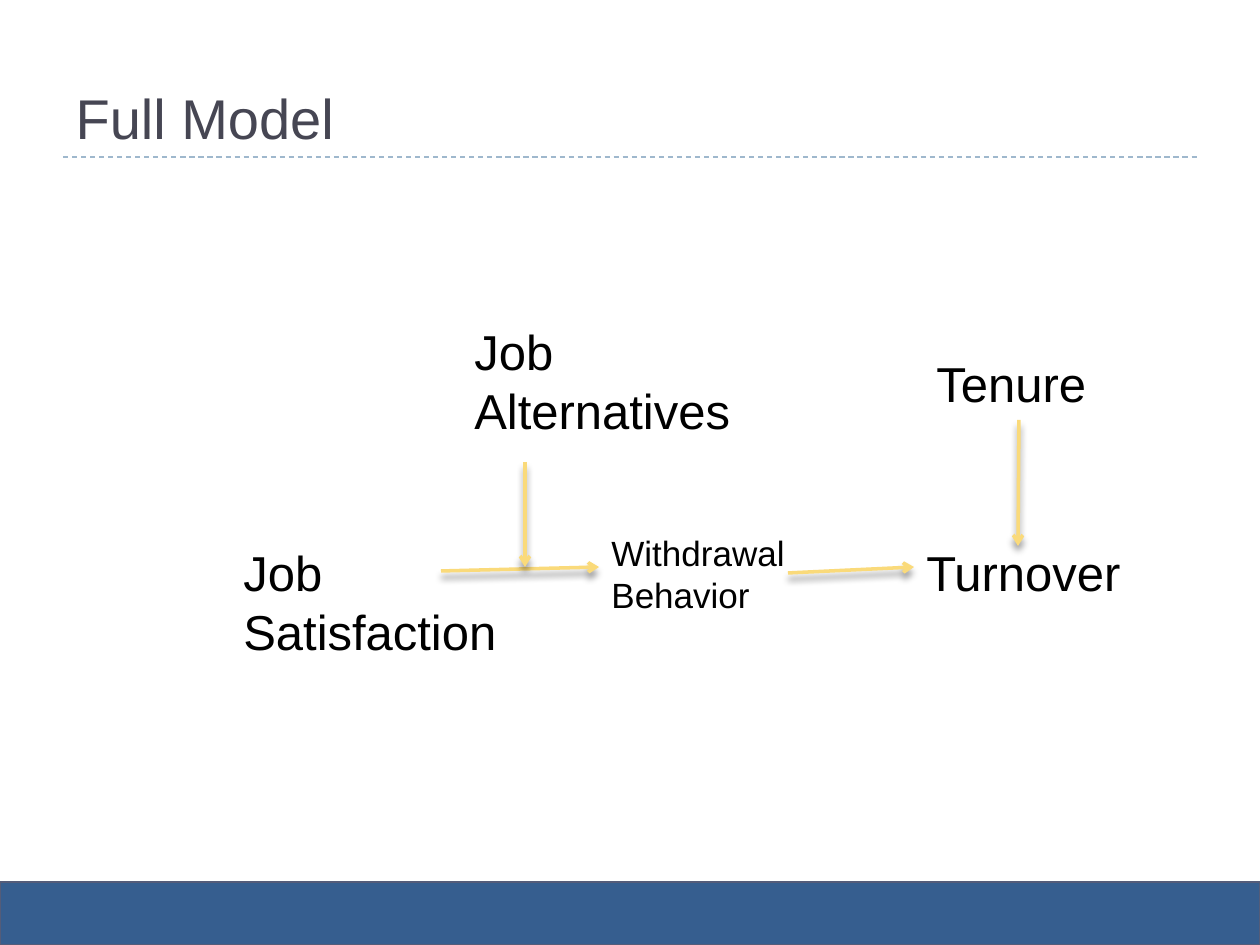
from lxml.etree import SubElement
from pptx import Presentation
from pptx.dml.color import RGBColor
from pptx.enum.dml import MSO_LINE
from pptx.enum.shapes import MSO_CONNECTOR, MSO_SHAPE
from pptx.enum.text import MSO_ANCHOR as ANCHOR, MSO_AUTO_SIZE as AUTO_SIZE, PP_ALIGN
from pptx.oxml.ns import qn
from pptx.util import Pt

PX = 914400 / 126
SLIDE_WIDTH, SLIDE_HEIGHT = 1260, 945
FONT = "Arial"
BLACK = RGBColor(0x00, 0x00, 0x00)
TITLE_GRAY = RGBColor(0x46, 0x46, 0x53)
RULE_BLUE = RGBColor(0x9F, 0xB8, 0xCD)
BAND_BLUE = RGBColor(0x36, 0x5E, 0x8F)
BAND_EDGE = RGBColor(0x54, 0x5C, 0x79)
ARROW_YELLOW = RGBColor(0xFA, 0xDA, 0x7A)

# Variables of the model: text, offset and size within the diagram, text size
VARIABLES = [
    ("Turnover", (683, 221, 262, 72), 28),
    ("Job Satisfaction", (0, 221, 325, 131), 28),
    ("Withdrawal\nBehavior", (368, 210, 221, 97), 20),
    ("Job Alternatives", (231, 0, 357, 131), 28),
    ("Tenure", (693, 32, 210, 72), 28),
]
# Effects between them: start and end within the diagram
EFFECTS = [
    ((210, 256), (368, 252)),
    ((557, 258), (683, 252)),
    ((788, 105), (787, 231)),
    ((294, 147), (294, 252)),
]


def emu(*lengths):
    return [round(length * PX) for length in lengths]


def write_text(shape, text, size=28, color=BLACK, anchor=ANCHOR.TOP, auto_size=AUTO_SIZE.NONE):
    frame = shape.text_frame
    frame.text = text
    frame.word_wrap = True
    frame.auto_size = auto_size
    frame.vertical_anchor = anchor
    for paragraph in frame.paragraphs:
        paragraph.alignment = PP_ALIGN.LEFT
        font = paragraph.runs[0].font
        font.name, font.size, font.color.rgb = FONT, Pt(size), color


def add_line(slide, start, end, color, width):
    connector = slide.shapes.add_connector(MSO_CONNECTOR.STRAIGHT, *emu(*start, *end))
    connector.line.color.rgb = color
    connector.line.width = Pt(width)
    effects = SubElement(connector._element.spPr, qn("a:effectLst"))
    return connector, effects


def add_arrow(slide, start, end):
    connector, effects = add_line(slide, start, end, ARROW_YELLOW, 2)
    SubElement(connector.line._get_or_add_ln(), qn("a:tailEnd"), type="arrow")
    # Soft shadow straight below the arrow
    shadow = SubElement(effects, qn("a:outerShdw"), blurRad=str(Pt(4)), dist=str(Pt(3.4)),
                        dir="5400000", rotWithShape="0")
    shade = SubElement(shadow, qn("a:srgbClr"), val=str(BLACK))
    SubElement(shade, qn("a:alpha"), val="40000")


def add_title(slide, text, left, top, width, height):
    title = slide.shapes.title
    title.left, title.top, title.width, title.height = emu(left, top, width, height)
    write_text(title, text, size=32, color=TITLE_GRAY, anchor=ANCHOR.BOTTOM)
    bottom = top + height
    rule, _ = add_line(slide, (left, bottom), (left + width, bottom), RULE_BLUE, 0.75)
    rule.line.dash_style = MSO_LINE.DASH


def add_footer_band(slide, left, top, width, height):
    band = slide.shapes.add_shape(MSO_SHAPE.RECTANGLE, *emu(left, top, width, height))
    band.shadow.inherit = False
    band.fill.solid()
    band.fill.fore_color.rgb = BAND_BLUE
    band.line.color.rgb = BAND_EDGE
    band.line.width = Pt(1.5)


def add_model_diagram(slide, left, top):
    for text, (x, y, width, height), size in VARIABLES:
        box = slide.shapes.add_textbox(*emu(left + x, top + y, width, height))
        write_text(box, text, size=size, auto_size=AUTO_SIZE.SHAPE_TO_FIT_TEXT)
    for start, end in EFFECTS:
        add_arrow(slide, *((left + x, top + y) for x, y in (start, end)))


def main():
    presentation = Presentation()
    presentation.slide_width, presentation.slide_height = emu(SLIDE_WIDTH, SLIDE_HEIGHT)
    slide = presentation.slides.add_slide(presentation.slide_layouts[5])
    add_footer_band(slide, 0, 882, SLIDE_WIDTH, 63)
    add_title(slide, "Full Model", 63, 21, 1134, 136)
    add_model_diagram(slide, 231, 315)
    presentation.save("out.pptx")


if __name__ == "__main__":
    main()
